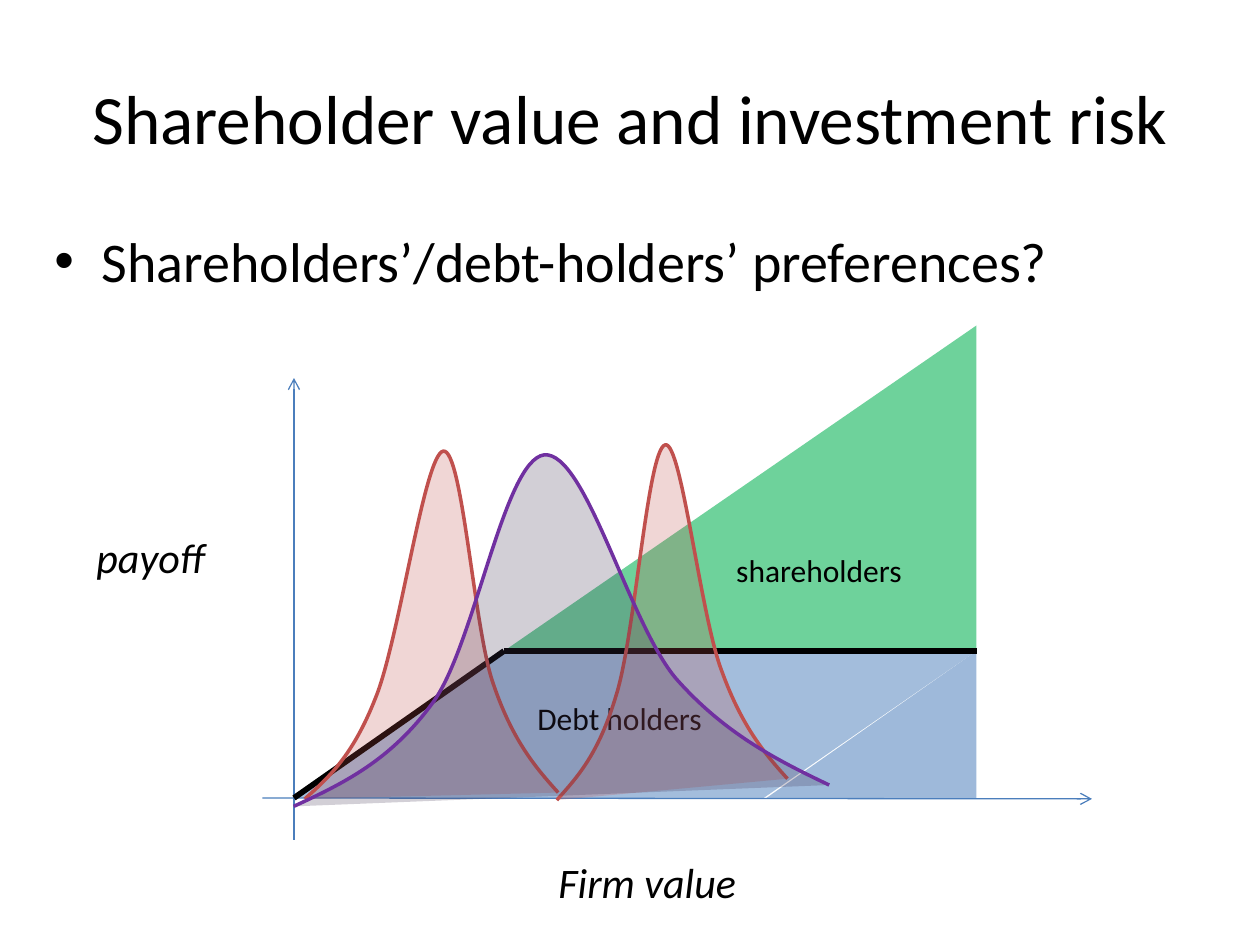
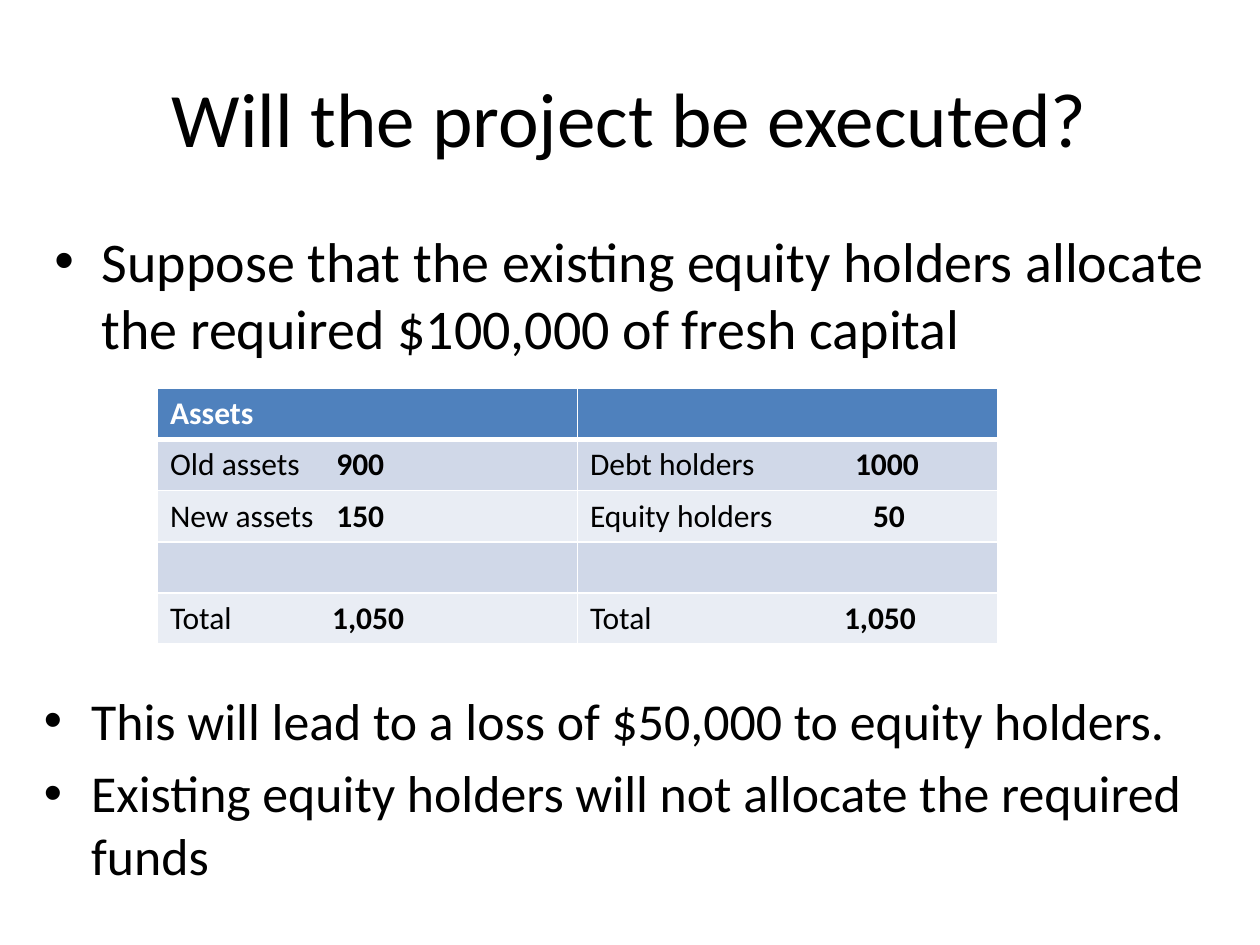
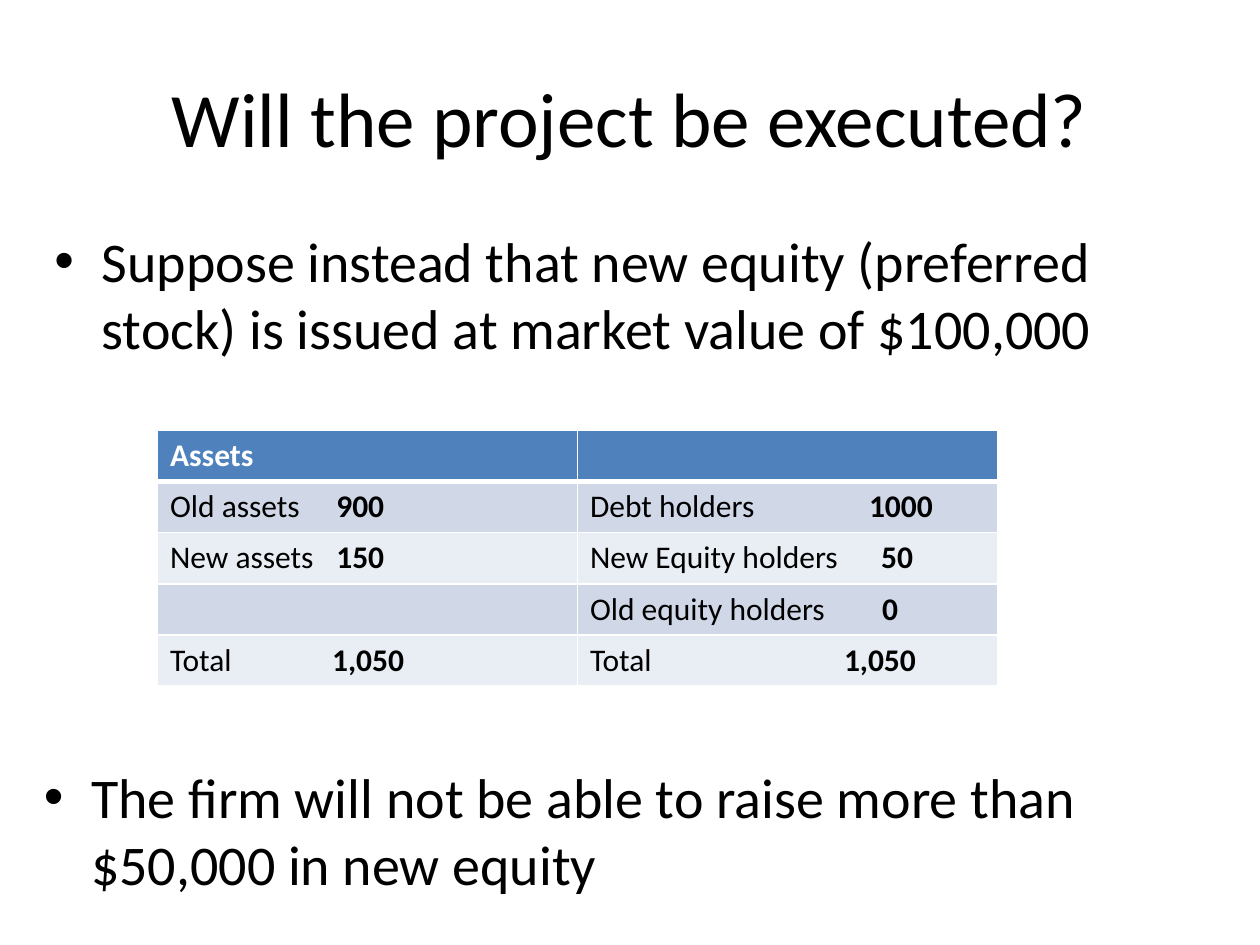
"""Builds three slides on shareholder value, debt holders and project execution."""
from lxml import etree
from pptx import Presentation
from pptx.dml.color import RGBColor
from pptx.enum import shapes, text
from pptx.oxml.ns import qn
from pptx.util import Pt

FONT = "Calibri"
BLACK, WHITE, BLUE, GREEN = "000000", "FFFFFF", "4F81BD", "00B050"
AXIS, RED, PURPLE, PLUM = "4B7EBC", "C0504D", "7030A0", "403152"
BANDS = ["D0D8E8", "E9EDF4"]
INDENT = 27

ORIGIN, KINK, DEBT_END = (168, 456), (288, 372), (558, 372)
AXES = [((150, 456), (624, 456.5)), ((168, 480), (168, 216))]
PAYOFF_LINES = [(ORIGIN, KINK), (KINK, DEBT_END)]
AXIS_LABELS = [("payoff", (48, 300, 84, 36)), ("Firm value", (312, 486, 120, 36))]
CURVES = [
    (RED, RED, [(174.2, 456.5), (187.9, 444.2), (201.6, 432), (214.6, 398.9), (228.2, 365.8),
                (242.6, 259.2), (253.4, 257.8), (264.2, 256.3), (270.7, 357.1), (281.5, 389.5),
                (292.3, 421.9), (305.3, 437.8), (319, 452.9)]),
    (RED, RED, [(318.2, 457.2), (329.8, 444.2), (342, 431.3), (352.1, 397.4), (362.9, 363.6),
                (370.1, 256.3), (380.2, 254.2), (389.5, 252), (400.3, 352.1), (412.6, 383.8),
                (424.1, 415.4), (437, 430.6), (450, 445)]),
    (PLUM, PURPLE, [(167.8, 460.8), (195.8, 447.8), (223.2, 434.9), (247.7, 401), (271.4, 367.9),
                    (288, 262.8), (311, 259.9), (334.8, 257.8), (359.3, 356.4), (386.6, 388.1),
                    (414, 419), (443.5, 434.2), (473.8, 448.6)]),
]

OLD, NEW = ("Old assets", "900", 95), ("New assets", "150", 95)
TOTALS = [("Total", "1,050", 92.6), ("Total", "1,050", 145.1)]
BALANCE_SLIDES = [
    dict(lead="Suppose that the existing equity holders allocate the required $100,000 of fresh capital",
         table_top=222,
         rows=[[OLD, ("Debt holders", "1000", 151.4)],
               [NEW, ("Equity holders", "50", 161.7)],
               [None, None], TOTALS],
         result=["This will lead to a loss of $50,000 to equity holders.",
                 "Existing equity holders will not allocate the required funds"],
         result_box=(18, 390, 672, 138), result_size=29.6),
    dict(lead="Suppose instead that new equity (preferred stock) is issued at market value of $100,000",
         table_top=246,
         rows=[[OLD, ("Debt holders", "1000", 159.4)],
               [NEW, ("New Equity holders", "50", 166.3)],
               [None, ("Old equity holders", "0", 166.9)], TOTALS],
         result=["The firm will not be able to raise more than $50,000 in new equity"],
         result_box=(18, 432, 672, 96), result_size=32),
]


def rgb(color):
    return RGBColor.from_string(color)


def pts(values):
    return [Pt(v) for v in values]


def sub(parent, tag, **attrs):
    return etree.SubElement(parent, qn(tag), {k: str(v) for k, v in attrs.items()})


def style(p, size, color=BLACK, bold=False, italic=False):
    f = p.font
    f.name, f.size, f.bold, f.italic = FONT, Pt(size), bold, italic
    f.color.rgb = rgb(color)


def add_text(s, box, lines, size, bullets=False, italic=False, centered=False):
    tf = s.shapes.add_textbox(*pts(box)).text_frame
    tf.word_wrap = True
    if centered:
        tf.vertical_anchor = text.MSO_ANCHOR.MIDDLE
    for i, line in enumerate(lines):
        p = tf.add_paragraph() if i else tf.paragraphs[0]
        p.text = line
        if centered:
            p.alignment = text.PP_ALIGN.CENTER
        if bullets:
            p.space_before = Pt(round(size * 0.2, 1))
            pPr = p._p.get_or_add_pPr()
            pPr.set("marL", str(Pt(INDENT)))
            pPr.set("indent", str(-Pt(INDENT)))
            sub(pPr, "a:buFont", typeface="Arial")
            sub(pPr, "a:buChar", char="•")
        style(p, size, italic=italic)


def add_slide(prs, title, lead, title_size=44, lead_height=96):
    s = prs.slides.add_slide(prs.slide_layouts[6])
    add_text(s, (36, 21.6, 648, 90), [title], title_size, centered=True)
    add_text(s, (24, 126, 672, lead_height), [lead], 32, bullets=True)
    return s


def add_line(s, start, end, color, width, arrow=False):
    c = s.shapes.add_connector(shapes.MSO_CONNECTOR.STRAIGHT, *pts(start + end))
    c.line.color.rgb, c.line.width = rgb(color), Pt(width)
    if arrow:
        sub(c.line._get_or_add_ln(), "a:tailEnd", type="arrow")
    sub(c._element.spPr, "a:effectLst")


def fill(sp, color, opacity):
    sp.shadow.inherit = False
    sp.fill.solid()
    sp.fill.fore_color.rgb = rgb(color)
    clr = sp._element.spPr.find(".//" + qn("a:srgbClr"))
    sub(clr, "a:alpha", val=opacity * 1000)


def add_area(s, kind, box, color, opacity, flips=("flipH",)):
    sp = s.shapes.add_shape(kind, *pts(box))
    fill(sp, color, opacity)
    sp.line.fill.background()
    for flip in flips:
        sp._element.spPr.xfrm.set(flip, "1")
    return sp


def add_curve(s, fill_color, line_color, points):
    start, *rest = [pts(p) for p in points]
    fb = s.shapes.build_freeform(*start)
    fb.add_line_segments(rest, close=False)
    sp = fb.convert_to_shape()
    outline = sp._element.find(".//" + qn("a:path"))
    for i, segment in enumerate(outline.findall(qn("a:lnTo"))):
        if i % 3 == 0:
            bezier = sub(outline, "a:cubicBezTo")
        bezier.append(segment[0])
        outline.remove(segment)
    fill(sp, fill_color, 23)
    sp.line.color.rgb, sp.line.width = rgb(line_color), Pt(2)


def add_payoff_chart(s):
    for start, end in AXES:
        add_line(s, start, end, AXIS, 0.75, arrow=True)
    for label, box in AXIS_LABELS:
        add_text(s, box, [label], 24, italic=True)
    kinds = shapes.MSO_SHAPE
    debt = add_area(s, kinds.PARALLELOGRAM, (168, 372, 390, 84), BLUE, 52, ("flipH", "flipV"))
    debt.adjustments[0] = 1.447
    equity = add_area(s, kinds.RIGHT_TRIANGLE, (288, 186, 270, 186), GREEN, 57)
    p = equity.text_frame.paragraphs[0]
    p.text, p.alignment = "shareholders", text.PP_ALIGN.CENTER
    style(p, 18)
    add_area(s, kinds.RIGHT_TRIANGLE, (438, 372, 120, 84), BLUE, 55)
    add_text(s, (300, 396, 132, 28.8), ["Debt holders"], 18)
    for start, end in PAYOFF_LINES:
        add_line(s, start, end, BLACK, 3.25)
    for curve in CURVES:
        add_curve(s, *curve)


def fill_cell(cell, row, entry):
    tcPr = cell._tc.get_or_add_tcPr()
    thick = {0: "a:lnB", 1: "a:lnT"}.get(row)
    for side in ("a:lnL", "a:lnR", "a:lnT", "a:lnB"):
        ln = sub(tcPr, side, w=Pt(3 if side == thick else 1))
        sub(sub(ln, "a:solidFill"), "a:srgbClr", val=WHITE)
    cell.fill.solid()
    cell.fill.fore_color.rgb = rgb(BANDS[(row - 1) % 2] if row else BLUE)
    if not entry:
        return
    label, value, tab = entry
    p = cell.text_frame.paragraphs[0]
    p.add_run().text = label
    if value:
        sub(sub(p._p.get_or_add_pPr(), "a:tabLst"), "a:tab", pos=Pt(tab), algn="l")
        r = p.add_run()
        r.text = "\t" + value
        r.font.bold = True
    style(p, 18, BLACK if row else WHITE, bold=row == 0)


def add_balance(s, top, rows):
    rows = [[("Assets", "", 0), None]] + rows
    height = 29.2
    frame = s.shapes.add_table(len(rows), 2, *pts((90, top, 480, height * len(rows))))
    for i, row in enumerate(rows):
        frame.table.rows[i].height = Pt(height)
        for j, entry in enumerate(row):
            fill_cell(frame.table.cell(i, j), i, entry)


def main():
    prs = Presentation()
    prs.slide_width, prs.slide_height = Pt(720), Pt(540)
    s = add_slide(prs, "Shareholder value and investment risk",
                  "Shareholders’/debt-holders’ preferences?", 39.6, 66)
    add_payoff_chart(s)
    for b in BALANCE_SLIDES:
        s = add_slide(prs, "Will the project be executed?", b["lead"])
        add_balance(s, b["table_top"], b["rows"])
        add_text(s, b["result_box"], b["result"], b["result_size"], bullets=True)
    prs.save("out.pptx")


if __name__ == "__main__":
    main()
